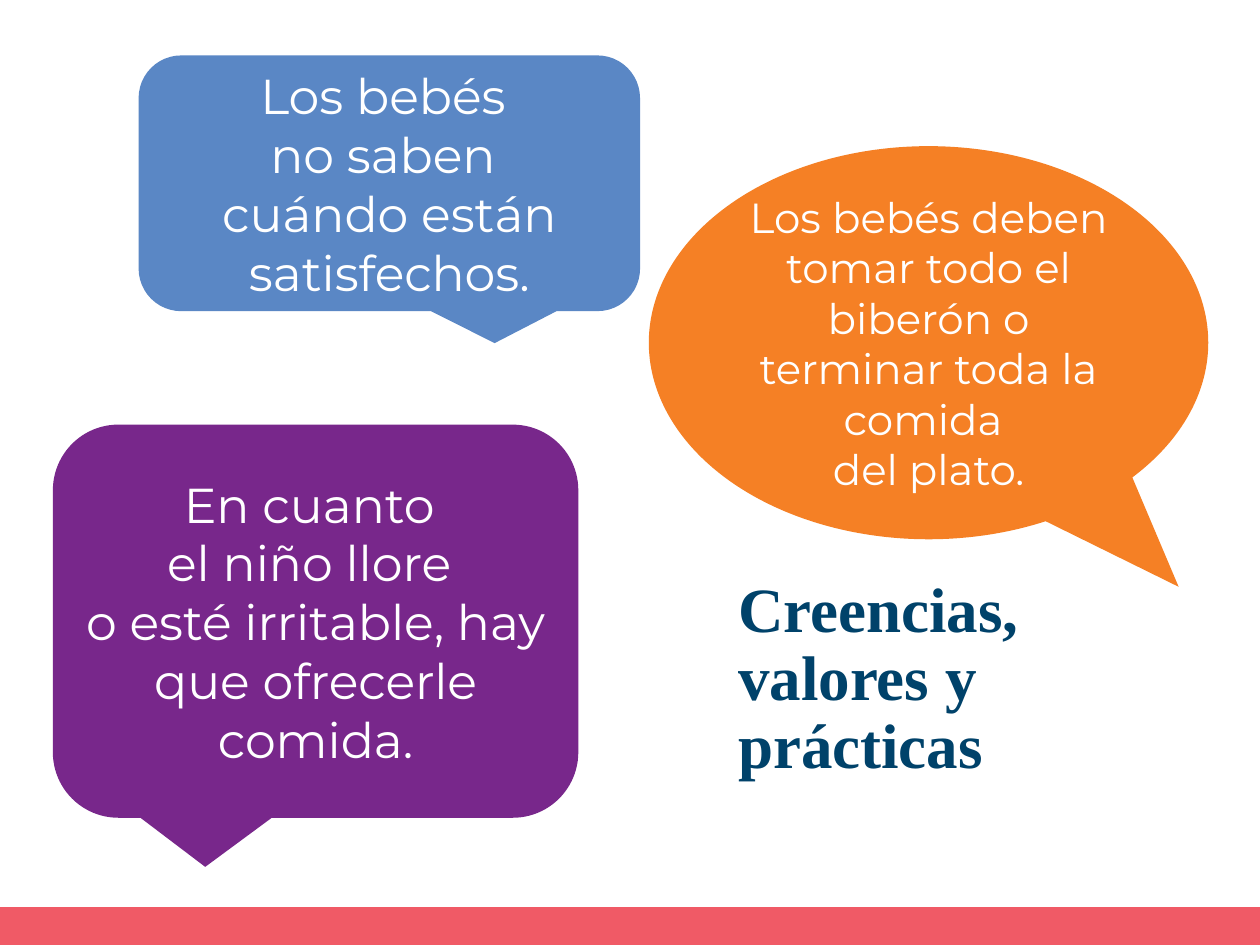
"""Build the slide on beliefs, values and practices about feeding babies."""
from dataclasses import dataclass

import pptx
import pptx.dml.color
import pptx.enum.shapes
import pptx.enum.text
import pptx.util

Inches = pptx.util.Inches
Pt = pptx.util.Pt
RGBColor = pptx.dml.color.RGBColor
ShapeType = pptx.enum.shapes.MSO_SHAPE
Anchor = pptx.enum.text.MSO_ANCHOR

WHITE = RGBColor(0xFF, 0xFF, 0xFF)
BLUE = RGBColor(0x5A, 0x87, 0xC5)
ORANGE = RGBColor(0xF5, 0x80, 0x25)
PURPLE = RGBColor(0x78, 0x27, 0x8B)
CORAL = RGBColor(0xF0, 0x5A, 0x66)
NAVY = RGBColor(0x00, 0x42, 0x6A)


@dataclass(frozen=True)
class Box:
    left: float
    top: float
    width: float
    height: float

    def lengths(self) -> tuple:
        return tuple(Inches(n) for n in (self.left, self.top, self.width, self.height))


@dataclass(frozen=True)
class Bubble:
    kind: ShapeType
    box: Box
    tip: tuple[float, float]
    color: RGBColor
    size: int
    lines: tuple[str, ...]


BUBBLES = (
    Bubble(ShapeType.ROUNDED_RECTANGULAR_CALLOUT, Box(1.1, 0.44, 3.98, 2.03), (0.21, 0.625),
           BLUE, 28, ("Los bebés ", "no saben ", "cuándo están satisfechos.")),
    Bubble(ShapeType.OVAL_CALLOUT, Box(5.15, 1.16, 4.44, 3.12), (0.447, 0.621), ORANGE, 24,
           ("Los bebés deben tomar todo el biberón o terminar toda la comida ", "del plato.")),
    Bubble(ShapeType.ROUNDED_RECTANGULAR_CALLOUT, Box(0.42, 3.37, 4.17, 3.12), (-0.21, 0.625),
           PURPLE, 28,
           ("En cuanto ", "el niño llore ", "o esté irritable, hay que ofrecerle comida.")),
)


def add_filled_shape(slide, kind: ShapeType, box: Box, color: RGBColor):
    shape = slide.shapes.add_shape(kind, *box.lengths())
    shape.shadow.inherit = False
    shape.fill.solid()
    shape.fill.fore_color.rgb = color
    shape.line.fill.background()
    return shape


def add_run(paragraph, text: str, font_name: str, size: int, color: RGBColor,
            bold: bool = False) -> None:
    run = paragraph.add_run()
    run.text = text
    run.font.name = font_name
    run.font.size = Pt(size)
    run.font.bold = bold
    run.font.color.rgb = color


def add_bubble(slide, bubble: Bubble) -> None:
    shape = add_filled_shape(slide, bubble.kind, bubble.box, bubble.color)
    shape.adjustments[0], shape.adjustments[1] = bubble.tip
    shape.text_frame.word_wrap = True
    shape.text_frame.vertical_anchor = Anchor.MIDDLE
    paragraph = shape.text_frame.paragraphs[0]
    paragraph.alignment = pptx.enum.text.PP_ALIGN.CENTER
    for index, line in enumerate(bubble.lines):
        if index:
            paragraph.add_line_break()
        add_run(paragraph, line, "Montserrat", bubble.size, WHITE)


def add_title(slide, box: Box, text: str) -> None:
    frame = slide.shapes.add_textbox(*box.lengths()).text_frame
    frame.word_wrap = True
    frame.vertical_anchor = Anchor.BOTTOM
    paragraph = frame.paragraphs[0]
    paragraph.line_spacing = 0.9
    add_run(paragraph, text, "Times New Roman", 36, NAVY, bold=True)


def main() -> None:
    presentation = pptx.Presentation()
    presentation.slide_width = Inches(10)
    presentation.slide_height = Inches(7.5)
    slide = presentation.slides.add_slide(presentation.slide_layouts[6])
    add_filled_shape(slide, ShapeType.RECTANGLE, Box(0, 7.2, 10, 0.3), CORAL)
    for bubble in BUBBLES:
        add_bubble(slide, bubble)
    add_title(slide, Box(5.76, 3.37, 3.82, 2.89), "Creencias, valores y prácticas")
    presentation.save("out.pptx")


if __name__ == "__main__":
    main()
